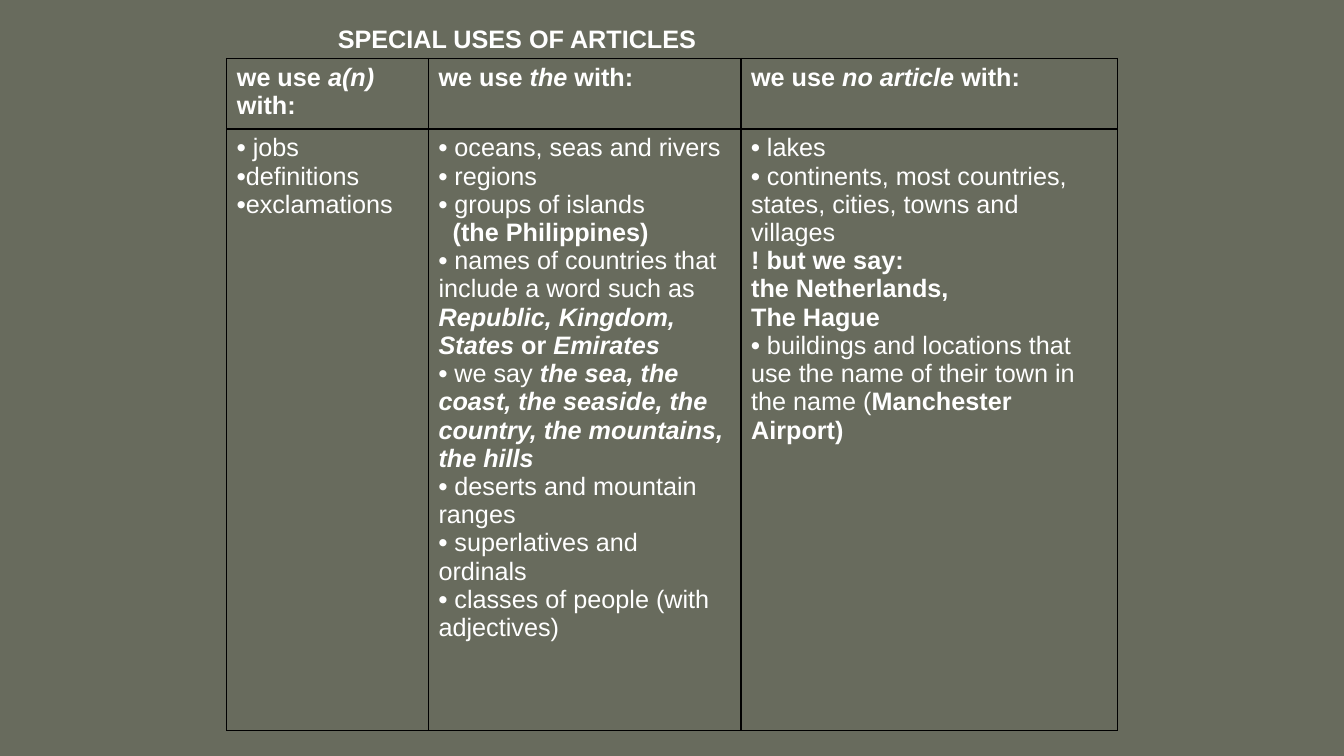
from dataclasses import dataclass

from lxml.etree import SubElement
from pptx import Presentation
from pptx.dml.color import RGBColor
from pptx.enum.text import MSO_ANCHOR, PP_ALIGN
from pptx.oxml.ns import qn
from pptx.util import Inches, Pt

OLIVE = RGBColor(0x68, 0x6B, 0x5D)
WHITE = RGBColor(0xFF, 0xFF, 0xFF)
BLACK = RGBColor(0x00, 0x00, 0x00)

COLUMN_WIDTHS = (2.0, 3.1, 3.73)
ROW_HEIGHTS = (0.7, 5.97)


@dataclass(frozen=True)
class Span:
    text: str
    bold: bool = False
    italic: bool = False


@dataclass(frozen=True)
class Line:
    spans: tuple[Span, ...]
    indent: float = 0


def strong(text: str) -> Span:
    return Span(text, bold=True)


def example(text: str) -> Span:
    return Span(text, bold=True, italic=True)


def heading(article: str) -> list[Line]:
    return [Line((strong("we use "), example(article), strong(" with:")))]


def bullet(text: str, *more: Span, mark: str = "• ") -> Line:
    return Line((strong(mark), Span(text), *more))


def note(text: str, indent: float = 0) -> Line:
    return Line((strong(text),), indent)


A_USES = [
    bullet("jobs"),
    bullet("definitions", mark="•"),
    bullet("exclamations", mark="•"),
]
THE_USES = [
    bullet("oceans, seas and rivers"),
    bullet("regions"),
    bullet("groups of islands"),
    note("(the Philippines)", indent=0.14),
    bullet("names of countries that include a word such as ",
           example("Republic, Kingdom, States"), strong(" or "),
           example("Emirates")),
    bullet("we say ",
           example("the sea, the coast, the seaside, the country, "
                   "the mountains, the hills")),
    bullet("deserts and mountain ranges"),
    bullet("superlatives and ordinals"),
    bullet("classes of people (with adjectives)"),
]
NO_ARTICLE_USES = [
    bullet("lakes"),
    bullet("continents, most countries, states, cities, towns and villages"),
    note("! but we say:"),
    note("the Netherlands,"),
    note("The Hague"),
    bullet("buildings and locations that use the name of their town in "
           "the name (", strong("Manchester Airport)")),
]
ROWS = (
    (heading("a(n)"), heading("the"), heading("no article")),
    (A_USES, THE_USES, NO_ARTICLE_USES),
)


def set_font(para) -> None:
    para.font.name = "Arial"
    para.font.size = Pt(18)
    para.font.color.rgb = WHITE


def add_borders(cell) -> None:
    properties = cell._tc.get_or_add_tcPr()
    for side in ("lnL", "lnR", "lnT", "lnB"):
        border = SubElement(properties, qn(f"a:{side}"), w=str(Pt(1)))
        fill = SubElement(border, qn("a:solidFill"))
        SubElement(fill, qn("a:srgbClr"), val=str(BLACK))


def fill_cell(cell, lines: list[Line]) -> None:
    add_borders(cell)
    cell.fill.background()
    frame = cell.text_frame
    for index, line in enumerate(lines):
        para = frame.add_paragraph() if index else frame.paragraphs[0]
        set_font(para)
        if line.indent:
            para._p.get_or_add_pPr().set("marL", str(Inches(line.indent)))
        for span in line.spans:
            run = para.add_run()
            run.text = span.text
            run.font.bold = span.bold
            run.font.italic = span.italic


def add_title(page) -> None:
    title = page.shapes.title
    title.left, title.top = Inches(3.25), Inches(0.18)
    title.width, title.height = Inches(3.77), Inches(0.7)
    frame = title.text_frame
    frame.text = "SPECIAL USES OF ARTICLES"
    frame.word_wrap = False
    frame.vertical_anchor = MSO_ANCHOR.TOP
    para = frame.paragraphs[0]
    para.alignment = PP_ALIGN.LEFT
    set_font(para)
    para.font.bold = True


def add_uses_table(page) -> None:
    table = page.shapes.add_table(
        len(ROW_HEIGHTS), len(COLUMN_WIDTHS), Inches(2.25), Inches(0.58),
        Inches(sum(COLUMN_WIDTHS)), Inches(sum(ROW_HEIGHTS))).table
    table.first_row = False
    table.horz_banding = False
    for column, width in zip(table.columns, COLUMN_WIDTHS):
        column.width = Inches(width)
    for row, height, contents in zip(table.rows, ROW_HEIGHTS, ROWS):
        row.height = Inches(height)
        for cell, lines in zip(row.cells, contents):
            fill_cell(cell, lines)


def main() -> None:
    deck = Presentation()
    deck.slide_width, deck.slide_height = Inches(13.33), Inches(7.5)
    page = deck.slides.add_slide(deck.slide_layouts.get_by_name("Title Only"))
    background = page.background.fill
    background.solid()
    background.fore_color.rgb = OLIVE
    add_title(page)
    add_uses_table(page)
    deck.save("out.pptx")


if __name__ == "__main__":
    main()
